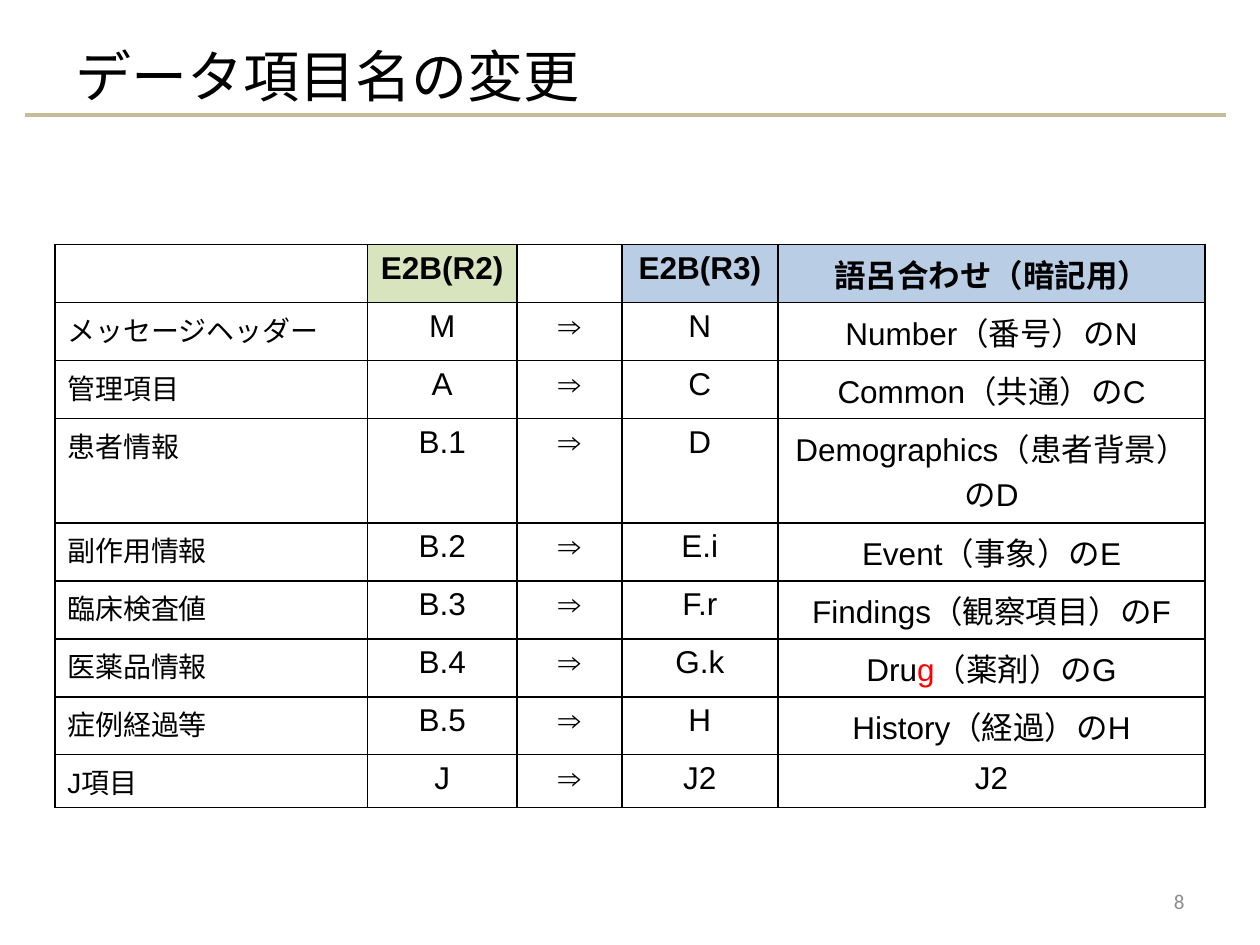
from dataclasses import dataclass
from typing import NamedTuple

from lxml.etree import SubElement
from pptx import Presentation
from pptx.dml.color import RGBColor as Color
from pptx.enum.shapes import MSO_CONNECTOR as Connector
from pptx.enum.text import MSO_ANCHOR as Anchor, PP_ALIGN as Align
from pptx.oxml.ns import qn
from pptx.util import Emu, Inches, Pt


@dataclass(frozen=True)
class Theme:
    black: str = "000000"
    red: str = "FF0000"
    gray: str = "8C8C8C"
    rule: str = "C4BD97"
    green: str = "D7E4BD"
    blue: str = "B9CDE5"
    heading_font: str = "Calibri"
    table_font: str = "Arial"
    title_size: int = 32
    body_size: int = 18
    label_size: int = 16
    number_size: int = 12


class Area(NamedTuple):
    left: float
    top: float
    width: float
    height: float


class Column(NamedTuple):
    width: float
    heading: str = ""
    fill: str = ""


ROW_HEIGHT, TWO_LINE_HEIGHT, LAST_HEIGHT = 0.46, 0.83, 0.42


class Item(NamedTuple):
    label: str
    old: str
    new: str
    mnemonic: str
    height: float = ROW_HEIGHT


THEME = Theme()
WIDTH, HEIGHT = Inches(10), Inches(7.5)
MARK = "|"
COLUMNS = [
    Column(2.48),
    Column(1.19, "E2B(R2)", THEME.green),
    Column(0.83),
    Column(1.24, "E2B(R3)", THEME.blue),
    Column(3.39, "語呂合わせ（暗記用）", THEME.blue),
]
ITEMS = [
    Item("メッセージヘッダー", "M", "N", "Number（番号）のN"),
    Item("管理項目", "A", "C", "Common（共通）のC"),
    Item("患者情報", "B.1", "D", "Demographics（患者背景）のD", TWO_LINE_HEIGHT),
    Item("副作用情報", "B.2", "E.i", "Event（事象）のE"),
    Item("臨床検査値", "B.3", "F.r", "Findings（観察項目）のF"),
    Item("医薬品情報", "B.4", "G.k", "Dru|g|（薬剤）のG"),
    Item("症例経過等", "B.5", "H", "History（経過）のH"),
    Item("J項目", "J", "J2", "J2", LAST_HEIGHT),
]


def style(para, size: int, font: str, color: str, align=Align.LEFT, bold: bool = False) -> None:
    para.alignment = align
    para.font.size, para.font.name, para.font.bold = Pt(size), font, bold
    para.font.color.rgb = Color.from_string(color)


def add_text(page, area: Area, text: str, size: int, color: str, align=Align.LEFT) -> None:
    box = page.shapes.add_textbox(
        Emu(int(WIDTH * area.left)), Emu(int(HEIGHT * area.top)),
        Emu(int(WIDTH * area.width)), Emu(int(HEIGHT * area.height)))
    box.text_frame.word_wrap = True
    box.text_frame.vertical_anchor = Anchor.MIDDLE
    para = box.text_frame.paragraphs[0]
    para.add_run().text = text
    style(para, size, THEME.heading_font, color, align)


def add_rule(page, left: float, right: float, top: float) -> None:
    y = Emu(int(HEIGHT * top))
    rule = page.shapes.add_connector(
        Connector.STRAIGHT, Emu(int(WIDTH * left)), y, Emu(int(WIDTH * right)), y)
    rule.line.color.rgb = Color.from_string(THEME.rule)
    rule.line.width = Pt(2.25)
    SubElement(rule._element.spPr, qn("a:effectLst"))


def draw_borders(cell) -> None:
    properties = cell._tc.get_or_add_tcPr()
    for side in ("lnL", "lnR", "lnT", "lnB"):
        line = SubElement(properties, qn(f"a:{side}"), w=str(Pt(1)))
        fill = SubElement(line, qn("a:solidFill"))
        SubElement(fill, qn("a:srgbClr"), val=THEME.black)


def fill_cell(cell, text: str, size: int, align, fill: str = "", bold: bool = False) -> None:
    draw_borders(cell)
    if fill:
        cell.fill.solid()
        cell.fill.fore_color.rgb = Color.from_string(fill)
    else:
        cell.fill.background()
    para = cell.text_frame.paragraphs[0]
    for index, part in enumerate(text.split(MARK) if text else []):
        span = para.add_run()
        span.text = part
        if index % 2:
            span.font.color.rgb = Color.from_string(THEME.red)
    style(para, size, THEME.table_font, THEME.black, align, bold)


def add_item_table(page, left: float, top: float) -> None:
    heights = [ROW_HEIGHT] + [item.height for item in ITEMS]
    frame = page.shapes.add_table(
        len(heights), len(COLUMNS), Emu(int(WIDTH * left)), Emu(int(HEIGHT * top)),
        Inches(sum(column.width for column in COLUMNS)), Inches(sum(heights)))
    table = frame.table
    table.first_row = table.horz_banding = False
    for row, height in zip(table.rows, heights):
        row.height = Inches(height)
    for index, column in enumerate(COLUMNS):
        table.columns[index].width = Inches(column.width)
        fill_cell(table.cell(0, index), column.heading, THEME.body_size,
                  Align.CENTER, column.fill, True)
    for row, item in enumerate(ITEMS, 1):
        fill_cell(table.cell(row, 0), item.label, THEME.label_size, Align.LEFT)
        for index, text in enumerate((item.old, "⇒", item.new, item.mnemonic), 1):
            fill_cell(table.cell(row, index), text, THEME.body_size, Align.CENTER)


def main() -> None:
    """Build the slide that maps the old data item names to the new ones."""
    deck = Presentation()
    deck.slide_width, deck.slide_height = WIDTH, HEIGHT
    page = deck.slides.add_slide(deck.slide_layouts[6])
    add_text(page, Area(0.05, 0.0275, 0.9, 0.103), "データ項目名の変更",
             THEME.title_size, THEME.black)
    add_item_table(page, 0.0435, 0.2588)
    add_rule(page, 0.02, 0.973, 0.1217)
    add_text(page, Area(0.717, 0.927, 0.233, 0.053), "8",
             THEME.number_size, THEME.gray, Align.RIGHT)
    deck.save("out.pptx")


if __name__ == "__main__":
    main()
